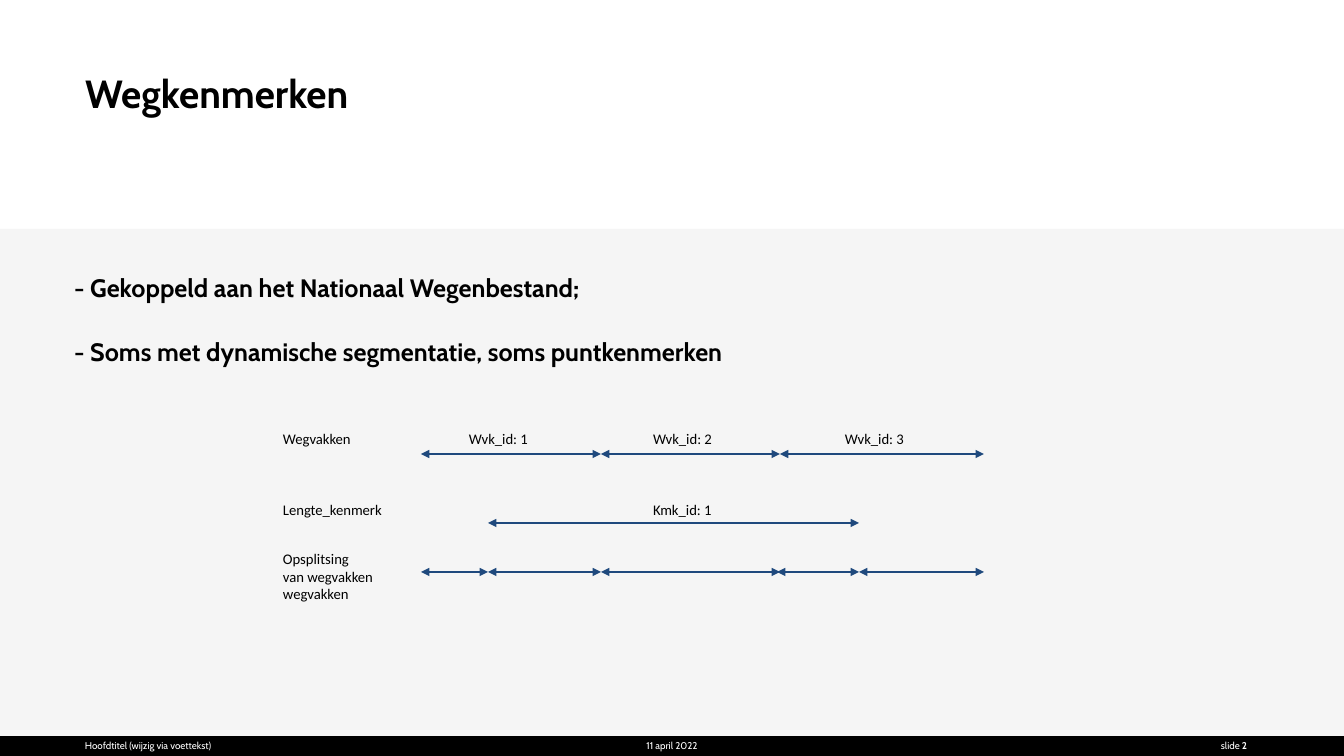
from pptx import Presentation
from pptx.dml.color import RGBColor
from pptx.enum.shapes import MSO_CONNECTOR as Link, MSO_SHAPE as Kind
from pptx.enum.text import MSO_ANCHOR as Anchor, MSO_AUTO_SIZE as Fit, PP_ALIGN as Align
from pptx.oxml.ns import qn
from pptx.util import Pt
from lxml.etree import SubElement

# Content
TITLE = "Wegkenmerken"
POINTS = [
    "- Gekoppeld aan het Nationaal Wegenbestand;",
    "- Soms met dynamische segmentatie, soms puntkenmerken",
]
# Arrow rows: y, then (from, to) spans
ROADS = [(421, 601), (601, 780), (780, 984)]
MARK = [(488, 859)]
PARTS = [(421, 488), (488, 601), (601, 780), (777, 859), (859, 984)]
ROWS = [(454, ROADS), (523, MARK), (572, PARTS)]
# Labels: x, y, width, height, paragraphs
LABELS = [
    (273, 425, 92, 27, ["Wegvakken"]),
    (459, 425, 93, 27, ["Wvk_id: 1"]),
    (643, 425, 88, 27, ["Wvk_id: 2"]),
    (835, 425, 92, 27, ["Wvk_id: 3"]),
    (273, 496, 122, 27, ["Lengte_kenmerk"]),
    (643, 496, 84, 27, ["Kmk_id: 1"]),
    (273, 545, 114, 44, ["Opsplitsing", "van wegvakken wegvakken"]),
]
# Footer: x, width, alignment, text, bold ending
FOOT = [
    (85, 454, Align.LEFT, "Hoofdtitel (wijzig via voettekst)", ""),
    (560, 224, Align.CENTER, "11 april 2022", ""),
    (1221, 111, Align.LEFT, "slide ", "2"),
]
WIDTH, HEIGHT, TOP, BAR = 1344, 756, 229, 736
BLACK, WHITE, GREY, BLUE = "000000", "FFFFFF", "F5F5F5", "1F497D"
SCALE = 914400 / 100.8


def px(*sizes):
    return [round(size * SCALE) for size in sizes]


def color(code):
    return RGBColor.from_string(code)


def write(shape, paras, size, font="Cabin", ink=BLACK, bold=False, align=Align.LEFT,
          anchor=Anchor.TOP, inset=(0, 0), after=0, line=1.0, end=""):
    frame = shape.text_frame
    frame.word_wrap, frame.auto_size = True, Fit.NONE
    frame.vertical_anchor = anchor
    frame.margin_left = frame.margin_right = px(inset[0])[0]
    frame.margin_top = frame.margin_bottom = px(inset[1])[0]
    for i, words in enumerate(paras):
        para = frame.add_paragraph() if i else frame.paragraphs[0]
        props = para._p.get_or_add_pPr()
        props.set("marL", "0")
        props.set("indent", "0")
        SubElement(props, qn("a:buNone"))
        para.alignment, para.line_spacing = align, line
        para.space_before, para.space_after = Pt(0), Pt(after)
        for part, heavy in ((words, bold), (end, True)):
            if part:
                run = para.add_run()
                run.text = part
                run.font.name, run.font.size, run.font.bold = font, Pt(size), heavy
                run.font.color.rgb = color(ink)


def place(shape, *box):
    shape.left, shape.top, shape.width, shape.height = px(*box)
    return shape


def arrow(shapes, start, stop, y):
    link = shapes.add_connector(Link.STRAIGHT, *px(start, y, stop, y))
    link.line.color.rgb, link.line.width = color(BLUE), Pt(1.5)
    props = link._element.spPr
    for tip in ("a:headEnd", "a:tailEnd"):
        SubElement(props.find(qn("a:ln")), qn(tip), type="triangle")
    SubElement(props, qn("a:effectLst"))


deck = Presentation()
deck.slide_width, deck.slide_height = px(WIDTH, HEIGHT)
slide = deck.slides.add_slide(deck.slide_layouts[1])
shapes = slide.shapes

# Background bands, behind the placeholders
for spot, (y, high, fill) in enumerate([(BAR, HEIGHT - BAR, BLACK), (TOP, BAR - TOP, GREY)]):
    band = shapes.add_shape(Kind.RECTANGLE, *px(0, y, WIDTH, high))
    band.shadow.inherit = False
    band.fill.solid()
    band.fill.fore_color.rgb = color(fill)
    band.line.fill.background()
    shapes._spTree.insert(2 + spot, band._element)

# Title and list
write(place(shapes.title, 85, 75, 1167, 111), [TITLE], 28, bold=True, line=0.9)
write(place(slide.placeholders[1], 74, 272, 1209, 446), POINTS, 18, bold=True, after=24)

# Footer
for x, wide, align, words, end in FOOT:
    box = shapes.add_textbox(*px(x, BAR, wide, HEIGHT - BAR))
    write(box, [words], 7, ink=WHITE, align=align, anchor=Anchor.MIDDLE, end=end)

# Road diagram
group = shapes.add_group_shape().shapes
for y, spans in ROWS:
    for start, stop in spans:
        arrow(group, start, stop, y)
for *spot, paras in LABELS:
    write(group.add_textbox(*px(*spot)), paras, 10.5, font="Calibri", inset=(10, 5))

deck.save("out.pptx")
